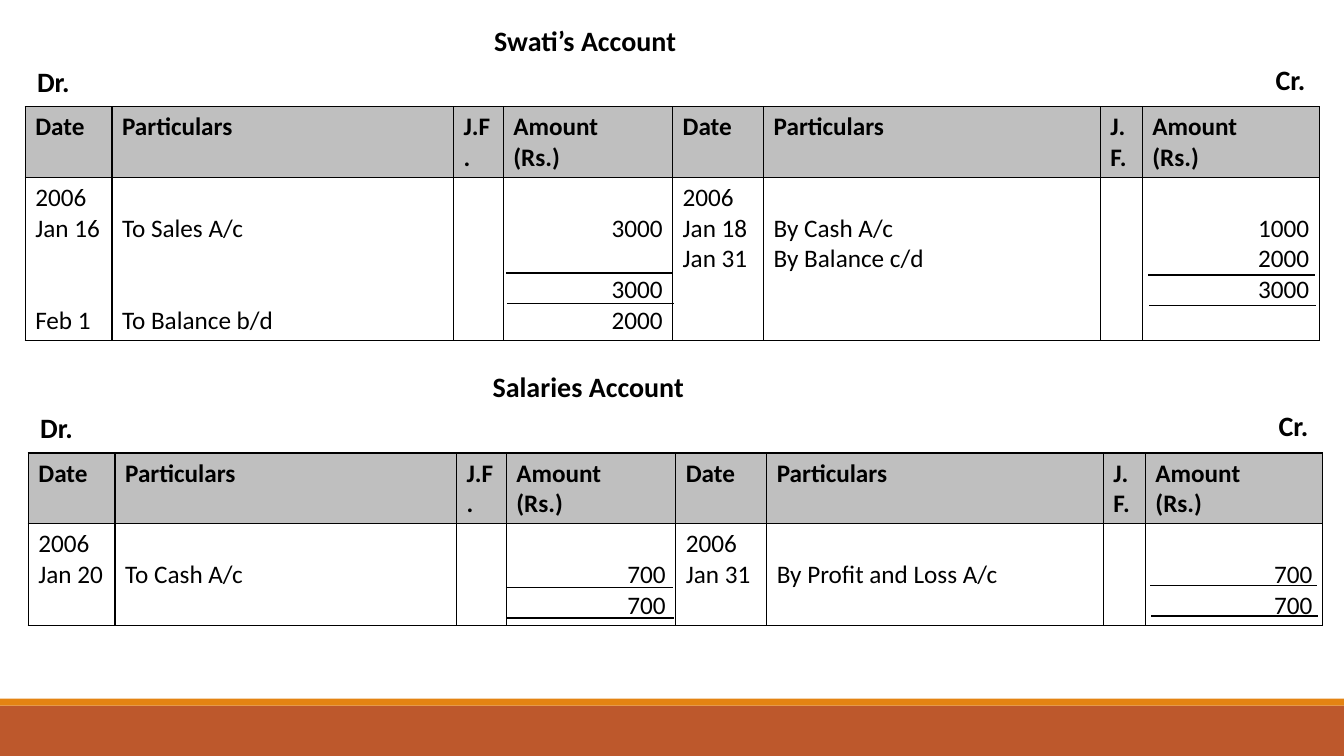
from dataclasses import dataclass

from lxml.etree import SubElement
from pptx import Presentation
from pptx.dml.color import RGBColor
from pptx.enum.shapes import MSO_CONNECTOR, MSO_SHAPE
from pptx.enum.text import MSO_ANCHOR, PP_ALIGN
from pptx.oxml.ns import qn
from pptx.util import Pt

HEADINGS = ["Date", "Particulars", "J.F.", "Amount\n(Rs.)"] * 2
COLUMN_WIDTHS = [62, 244, 35.5, 121, 65, 240.5, 30, 126.5]
AMOUNT_COLUMNS = (3, 7)

ACCOUNTS = [
    {
        "name": "Swati’s Account",
        "left": 18,
        "top": 13,
        "body_height": 115,
        "entries": [
            {0: "2006", 1: "Jan 16", 4: "Feb 1"},
            {1: "To Sales A/c", 4: "To Balance b/d"},
            {},
            {1: "3000", 3: "3000", 4: "2000"},
            {0: "2006", 1: "Jan 18", 2: "Jan 31"},
            {1: "By Cash A/c", 2: "By Balance c/d"},
            {},
            {1: "1000", 2: "2000", 3: "3000"},
        ],
        "total_rules": [(361.4, 195.1), (820.1, 196.5)],
    },
    {
        "name": "Salaries Account",
        "left": 20.2,
        "top": 260.4,
        "body_height": 72,
        "entries": [
            {0: "2006", 1: "Jan 20"},
            {1: "To Cash A/c"},
            {},
            {1: "700", 2: "700"},
            {0: "2006", 1: "Jan 31"},
            {1: "By Profit and Loss A/c"},
            {},
            {1: "700", 2: "700"},
        ],
        "total_rules": [(361.4, 419.6), (821.5, 418.4)],
    },
]


@dataclass(frozen=True)
class Theme:
    """Colours, font and sizes of the slide."""
    font: str = "Calibri"
    ink: RGBColor = RGBColor(0, 0, 0)
    heading_fill: RGBColor = RGBColor(0xBF, 0xBF, 0xBF)
    band: RGBColor = RGBColor(0xBD, 0x58, 0x2C)
    stripe: RGBColor = RGBColor(0xE4, 0x83, 0x12)
    title_size: int = 20
    cell_size: int = 18


THEME = Theme()
SLIDE_WIDTH, SLIDE_HEIGHT = 960, 540
LABEL_WIDTH, LABEL_HEIGHT = 245.5, 31.5
HEADING_HEIGHT = 50.5
LINE_HEIGHT = 22
CELL_MARGIN = 3.6
RULE_LENGTH, RULE_STEP = 119.5, (0.7, 21.7)


def style(paragraph, size, bold, align=PP_ALIGN.LEFT):
    paragraph.alignment = align
    paragraph.font.name = THEME.font
    paragraph.font.size = Pt(size)
    paragraph.font.bold = bold
    paragraph.font.color.rgb = THEME.ink


def fill_label(label, wording, left, top, align):
    label.left, label.top = Pt(left), Pt(top)
    label.width, label.height = Pt(LABEL_WIDTH), Pt(LABEL_HEIGHT)
    frame = label.text_frame
    frame.word_wrap = True
    frame.vertical_anchor = MSO_ANCHOR.TOP
    frame.text = wording
    style(frame.paragraphs[0], THEME.title_size, True, align)


def add_label(slide, *placing):
    fill_label(slide.shapes.add_textbox(0, 0, 0, 0), *placing)


def add_bar(slide, top, height, colour):
    bar = slide.shapes.add_shape(
        MSO_SHAPE.RECTANGLE, 0, Pt(top), Pt(SLIDE_WIDTH), Pt(height))
    bar.shadow.inherit = False
    bar.fill.solid()
    bar.fill.fore_color.rgb = colour
    bar.line.fill.background()


def add_rule(slide, left, top):
    rule = slide.shapes.add_connector(
        MSO_CONNECTOR.STRAIGHT, Pt(left), Pt(top), Pt(left + RULE_LENGTH), Pt(top))
    rule.line.color.rgb = THEME.ink
    rule.line.width = Pt(1)
    SubElement(rule.element.spPr, qn("a:effectLst"))


def outline(cell):
    properties = cell._tc.get_or_add_tcPr()
    for side in ("a:lnL", "a:lnR", "a:lnT", "a:lnB"):
        border = SubElement(properties, qn(side), w=str(Pt(1)))
        paint = SubElement(border, qn("a:solidFill"))
        SubElement(paint, qn("a:srgbClr"), val=str(THEME.ink))


def fill_heading(cell, heading):
    outline(cell)
    cell.fill.solid()
    cell.fill.fore_color.rgb = THEME.heading_fill
    cell.text = heading
    for paragraph in cell.text_frame.paragraphs:
        style(paragraph, THEME.cell_size, True)


def fill_entries(cell, entries, align):
    outline(cell)
    cell.fill.background()
    cell.text = "\n".join(entries.values())
    first_line = min(entries, default=0)
    cell.margin_top = Pt(CELL_MARGIN + first_line * LINE_HEIGHT)
    next_line = first_line
    for line, paragraph in zip(entries or [0], cell.text_frame.paragraphs):
        style(paragraph, THEME.cell_size, False, align)
        if line > next_line:
            paragraph.space_before = Pt((line - next_line) * LINE_HEIGHT)
        next_line = line + 1


def add_ledger(slide, account):
    ledger = slide.shapes.add_table(
        2, len(HEADINGS), Pt(account["left"]), Pt(account["top"] + 63.2),
        Pt(sum(COLUMN_WIDTHS)), Pt(HEADING_HEIGHT + account["body_height"])).table
    ledger.first_row = ledger.horz_banding = False
    ledger.rows[0].height = Pt(HEADING_HEIGHT)
    ledger.rows[1].height = Pt(account["body_height"])
    for index, width in enumerate(COLUMN_WIDTHS):
        ledger.columns[index].width = Pt(width)
        fill_heading(ledger.cell(0, index), HEADINGS[index])
        align = PP_ALIGN.RIGHT if index in AMOUNT_COLUMNS else PP_ALIGN.LEFT
        fill_entries(ledger.cell(1, index), account["entries"][index], align)


def add_account(slide, account):
    left, top = account["left"], account["top"]
    naming = (account["name"], left + 277.2, top, PP_ALIGN.CENTER)
    if slide.shapes.title.text_frame.text:
        add_label(slide, *naming)
    else:
        fill_label(slide.shapes.title, *naming)
    add_label(slide, "Dr.", left + 1.4, top + 29.5, PP_ALIGN.LEFT)
    add_label(slide, "Cr.", left + 676, top + 28, PP_ALIGN.RIGHT)
    add_ledger(slide, account)
    for rule_left, rule_top in account["total_rules"]:
        for step in range(2):
            add_rule(slide, rule_left + step * RULE_STEP[0],
                     rule_top + step * RULE_STEP[1])


def main():
    """Build the slide with two ledger accounts."""
    deck = Presentation()
    deck.slide_width, deck.slide_height = Pt(SLIDE_WIDTH), Pt(SLIDE_HEIGHT)
    slide = deck.slides.add_slide(deck.slide_layouts.get_by_name("Title Only"))
    add_bar(slide, 504, 36, THEME.band)
    add_bar(slide, 499, 5, THEME.stripe)
    for account in ACCOUNTS:
        add_account(slide, account)
    deck.save("out.pptx")


if __name__ == "__main__":
    main()
